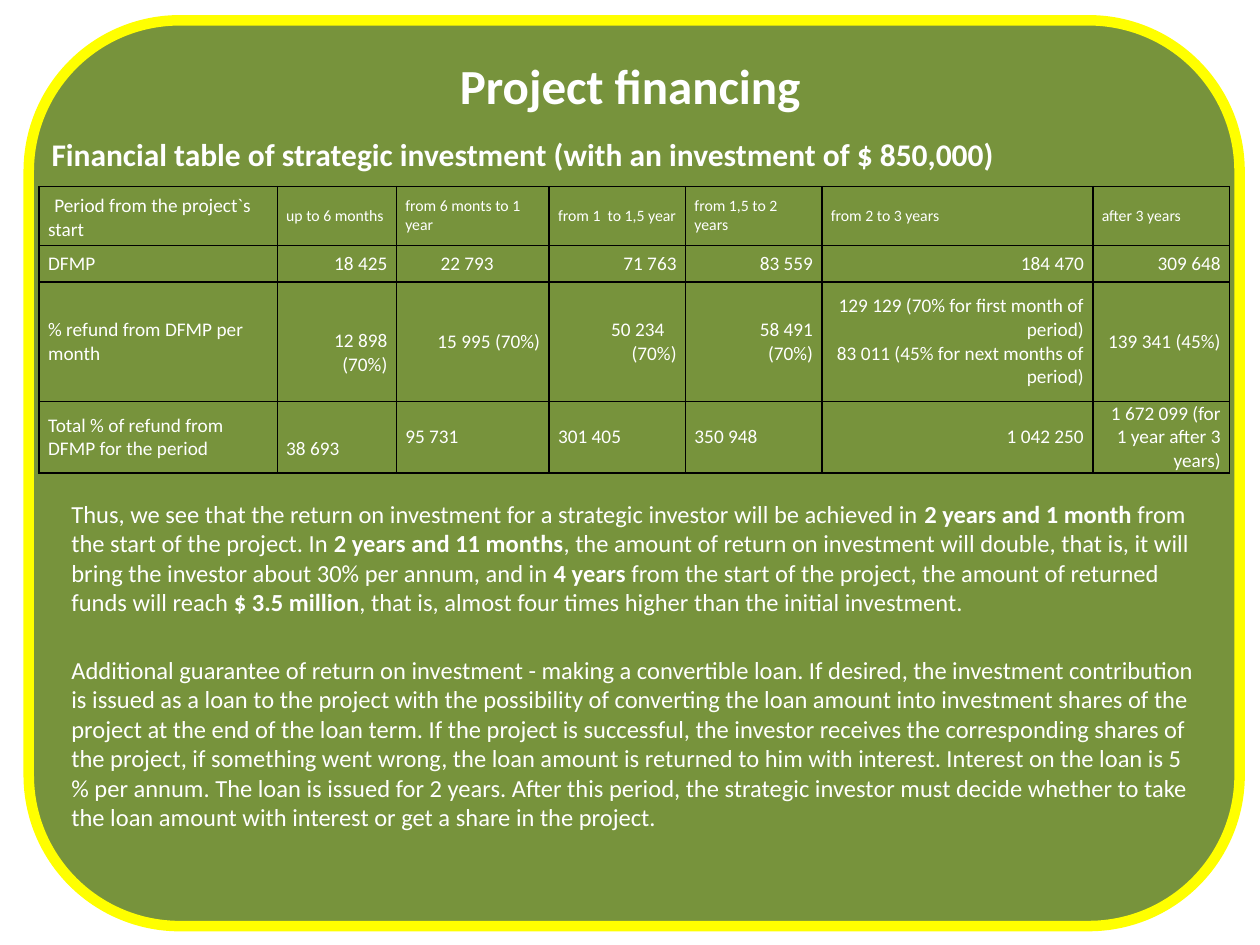
import lxml.etree
import pptx
import pptx.dml.color
import pptx.enum.shapes
import pptx.enum.text
import pptx.oxml.ns
import pptx.util

COLORS = {"panel": "77933C", "frame": "FFFF00", "text": "FFFFFF", "grid": "000000"}
FONT = "Calibri"
Cm = pptx.util.Cm
Pt = pptx.util.Pt
ALIGN = pptx.enum.text.PP_ALIGN
ALIGNMENTS = {"l": ALIGN.LEFT, "r": ALIGN.RIGHT, "j": ALIGN.JUSTIFY}

COLUMNS = [4.8, 2.4, 3.08, 2.75, 2.75, 5.46, 2.76]
ROWS = [
    (1.19, "lllllll", 9, [
        "Period from the project`s start", "up to 6 months", "from 6 monts to 1 year",
        "from 1  to 1,5 year", "from 1,5 to 2 years", "from 2 to 3 years", "after 3 years"]),
    (0.73, "lrjrrrr", 11, [
        "DFMP", "18 425", "22 793", "71 763", "83 559", "184 470", "309 648"]),
    (2.41, "lrrrrrr", 11, [
        "% refund from DFMP per month", "12 898 (70%)", "15 995 (70%)",
        "50 234\n(70%)", "58 491\n(70%)",
        "129 129 (70% for first month of period)\n83 011 (45% for next months of period)",
        "139 341 (45%)"]),
    (1.45, "ljjjjrr", 11, [
        "Total % of refund from DFMP for the period", "38 693", "95 731", "301 405",
        "350 948", "1 042 250", "1 672 099 (for 1 year after 3 years)"]),
]
INDENTS = {(1, 2): 0.71, (2, 3): 1.07}
LOWERED = {(2, 1), (3, 1)}

CONCLUSIONS = [
    "Thus, we see that the return on investment for a strategic investor will be achieved in "
    "|2 years and 1 month |from the start of the project. In |2 years and 11 months|, the amount "
    "of return on investment will double, that is, it will bring the investor about 30% per annum, "
    "and in |4 years| from the start of the project, the amount of returned funds will reach "
    "|$ 3.5 million|, that is, almost four times higher than the initial investment.",
    "Additional guarantee of return on investment - making a convertible loan. If desired, the "
    "investment contribution is issued as a loan to the project with the possibility of converting "
    "the loan amount into investment shares of the project at the end of the loan term. If the "
    "project is successful, the investor receives the corresponding shares of the project, if "
    "something went wrong, the loan amount is returned to him with interest. Interest on the loan "
    "is 5 % per annum. The loan is issued for 2 years. After this period, the strategic investor "
    "must decide whether to take the loan amount with interest or get a share in the project.",
]


def color(name):
    return pptx.dml.color.RGBColor.from_string(COLORS[name])


def style(para, size, bold=None):
    para.font.name = FONT
    para.font.size = Pt(size)
    para.font.bold = bold
    para.font.color.rgb = color("text")


def paragraphs(frame, count):
    return [frame.paragraphs[0]] + [frame.add_paragraph() for _ in range(count - 1)]


def add_panel(page, box):
    panel = page.shapes.add_shape(
        pptx.enum.shapes.MSO_SHAPE.ROUNDED_RECTANGLE, *map(Cm, box))
    panel.shadow.inherit = False
    panel.fill.solid()
    panel.fill.fore_color.rgb = color("panel")
    panel.line.color.rgb = color("frame")
    panel.line.width = Pt(6)


def add_text_frame(page, box):
    frame = page.shapes.add_textbox(*map(Cm, box)).text_frame
    frame.word_wrap = True
    return frame


def add_heading(page, box):
    title, subtitle = paragraphs(add_text_frame(page, box), 2)
    title.text = "Project financing"
    title.alignment = ALIGN.CENTER
    title.space_after = Pt(12)
    style(title, 28, True)
    subtitle.text = "Financial table of strategic investment (with an investment of $ 850,000)"
    subtitle.space_after = Pt(6)
    style(subtitle, 18, True)


def add_conclusions(page, box):
    frame = add_text_frame(page, box)
    for para, text in zip(paragraphs(frame, len(CONCLUSIONS)), CONCLUSIONS):
        style(para, 14)
        for index, part in enumerate(text.split("|")):
            span = para.add_run()
            span.text = part
            span.font.bold = index % 2 == 1
    frame.paragraphs[0].space_after = Pt(22)


def add_borders(cell):
    qn = pptx.oxml.ns.qn
    properties = cell._tc.get_or_add_tcPr()
    for index, side in enumerate(("lnL", "lnR", "lnT", "lnB")):
        line = lxml.etree.Element(qn("a:" + side), w=str(Pt(1)))
        fill = lxml.etree.SubElement(line, qn("a:solidFill"))
        lxml.etree.SubElement(fill, qn("a:srgbClr"), val=COLORS["grid"])
        properties.insert(index, line)


def fill_cell(cell, text, alignment, size, indent, lowered):
    cell.fill.background()
    add_borders(cell)
    cell.vertical_anchor = pptx.enum.text.MSO_ANCHOR.MIDDLE
    cell.margin_left = cell.margin_right = Cm(0.18)
    cell.margin_top = Cm(0.47 if lowered else 0)
    cell.margin_bottom = Cm(0)
    lines = text.split("\n")
    for para, line in zip(paragraphs(cell.text_frame, len(lines)), lines):
        para.text = line
        para.alignment = ALIGNMENTS[alignment]
        style(para, size)
    if indent:
        first = cell.text_frame.paragraphs[0]
        first.alignment = ALIGN.JUSTIFY
        first._p.get_or_add_pPr().set("marL", str(Cm(indent)))


def add_finance_table(page, box):
    table = page.shapes.add_table(len(ROWS), len(COLUMNS), *map(Cm, box)).table
    table.first_row = table.horz_banding = False
    for column, width in zip(table.columns, COLUMNS):
        column.width = Cm(width)
    for row, (height, alignments, size, texts) in enumerate(ROWS):
        table.rows[row].height = Cm(height)
        for column, (text, alignment) in enumerate(zip(texts, alignments)):
            place = (row, column)
            fill_cell(table.cell(row, column), text, alignment,
                      size if column else 11, INDENTS.get(place), place in LOWERED)
    corner = table.cell(0, 0).text_frame.paragraphs[0]
    label = corner.text
    corner.clear()
    space, span = corner.add_run(), corner.add_run()
    space.text, span.text = " ", label
    space.font.name = "Times New Roman"
    space.font.size = Pt(14)


def main():
    deck = pptx.Presentation()
    deck.slide_width, deck.slide_height = Cm(25.4), Cm(19.05)
    page = deck.slides.add_slide(deck.slide_layouts[6])
    add_panel(page, (0.58, 0.41, 24.41, 18.26))
    add_heading(page, (0.79, 0.99, 23.83, 4.01))
    add_conclusions(page, (1.19, 9.93, 23.24, 8.13))
    add_finance_table(page, (0.79, 3.76, 24, 5.78))
    deck.save("out.pptx")


if __name__ == "__main__":
    main()
